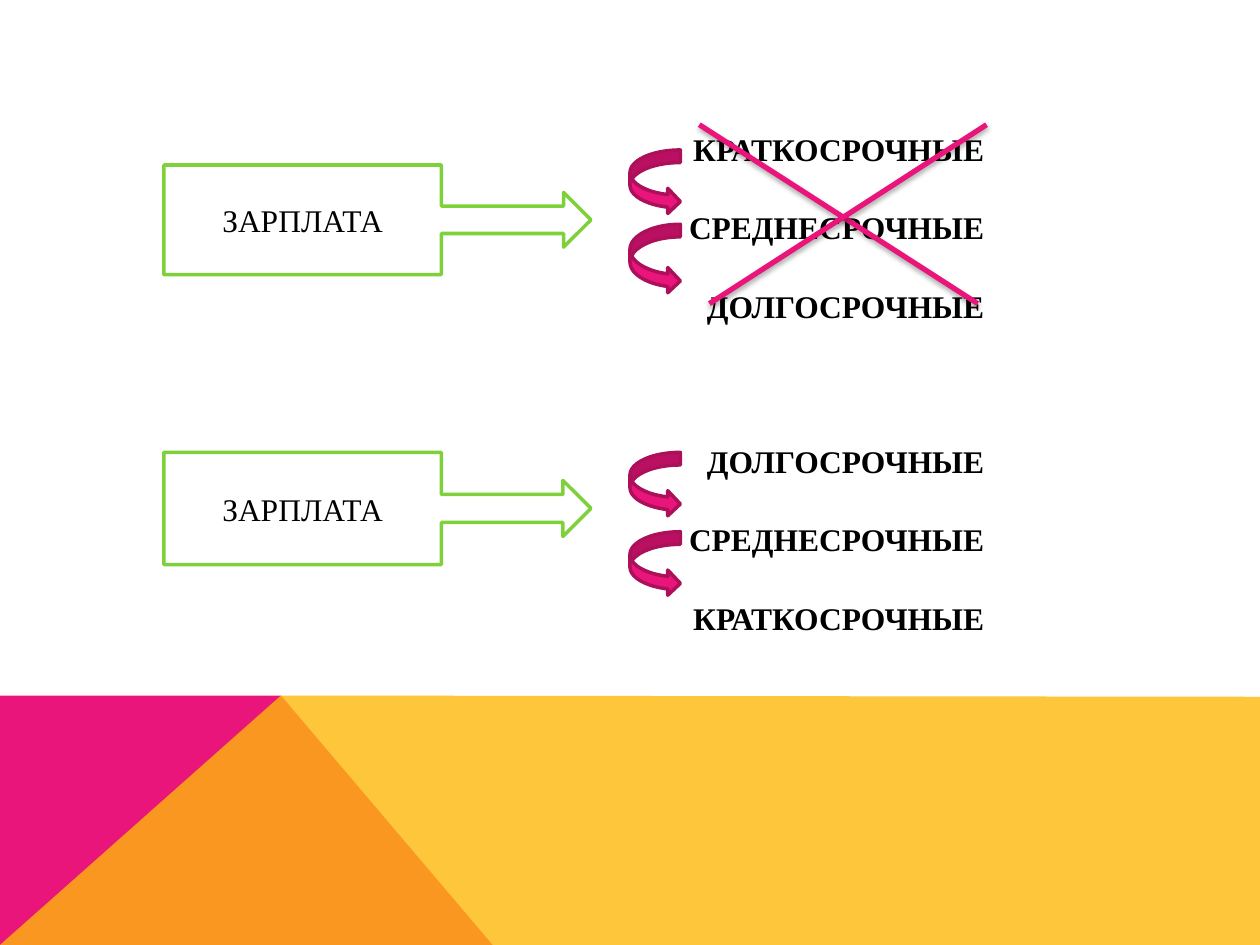
from lxml import etree
from pptx import Presentation
from pptx.dml.color import RGBColor
from pptx.enum.shapes import MSO_CONNECTOR, MSO_SHAPE
from pptx.enum.text import MSO_ANCHOR, PP_ALIGN
from pptx.oxml import parse_xml
from pptx.oxml.ns import nsdecls, qn
from pptx.util import Inches, Pt

STRAIGHT = MSO_CONNECTOR.STRAIGHT
CALLOUT = MSO_SHAPE.RIGHT_ARROW_CALLOUT
CURVED_ARROW = MSO_SHAPE.CURVED_RIGHT_ARROW
MIDDLE = MSO_ANCHOR.MIDDLE
CENTER, RIGHT = PP_ALIGN.CENTER, PP_ALIGN.RIGHT

PINK = RGBColor(0xEA, 0x15, 0x7A)
DARK_PINK = RGBColor(0xAD, 0x10, 0x5A)
YELLOW = RGBColor(0xFE, 0xB8, 0x0A)
GREEN = RGBColor(0x7F, 0xD1, 0x3B)
WHITE = RGBColor(0xFF, 0xFF, 0xFF)
BLACK = RGBColor(0, 0, 0)
FONT = "Times New Roman"

SHADOW = (
    f'<a:effectLst {nsdecls("a")}>'
    f'<a:outerShdw blurRad="{Pt(3.1)}" dist="{Pt(1.8)}" dir="5400000" rotWithShape="0">'
    '<a:srgbClr val="000000"><a:alpha val="35000"/></a:srgbClr>'
    '</a:outerShdw></a:effectLst>'
)


def add_outlined(kind, left, top, width, height, fill, line):
    sp = s.shapes.add_shape(kind, Inches(left), Inches(top), Inches(width), Inches(height))
    sp.shadow.inherit = False
    sp.fill.solid()
    sp.fill.fore_color.rgb = fill
    sp.line.color.rgb = line
    sp.line.width = Pt(2)
    return sp


def add_run(p, text, bold=False):
    r = p.add_run()
    r.text = text
    r.font.name = FONT
    r.font.size = Pt(18)
    r.font.bold = bold
    r.font.color.rgb = BLACK


prs = Presentation()
prs.slide_width, prs.slide_height = Inches(10), Inches(7.5)
s = prs.slides.add_slide(prs.slide_layouts[6])

# Coloured band along the bottom
bands = [
    (PINK, [(0, 7.5), (0, 5.52), (2.23, 5.52), (3.91, 7.5)]),
    (YELLOW, [(0, 7.5), (2.23, 5.52), (10, 5.53), (10, 7.5)]),
]
for color, points in bands:
    (x, y), *rest = [(Inches(px), Inches(py)) for px, py in points]
    builder = s.shapes.build_freeform(x, y)
    builder.add_line_segments(rest, close=True)
    sp = builder.convert_to_shape()
    sp.shadow.inherit = False
    sp.fill.solid()
    sp.fill.fore_color.rgb = color
    sp.line.fill.background()
# The yellow part lets the pink show through
clr = sp.fill._xPr.find(qn("a:solidFill"))[0]
etree.SubElement(clr, qn("a:alpha")).set("val", "80000")

# Both lists of terms, the second set off by one line
terms = ["КРАТКОСРОЧНЫЕ", "СРЕДНЕСРОЧНЫЕ", "ДОЛГОСРОЧНЫЕ"]
tf = s.shapes.add_textbox(Inches(0.9), Inches(0.68), Inches(7.01), Inches(4.44)).text_frame
tf.word_wrap = True
for i, term in enumerate(terms + terms[::-1]):
    p = tf.paragraphs[0] if i == 0 else tf.add_paragraph()
    p.alignment = RIGHT
    p.line_spacing = 2.0
    p.space_before = Pt(45 if i == len(terms) else 1.8)
    add_run(p, term, bold=True)

# Curved arrows from term to term
for top, height in [(1.19, 0.51), (1.78, 0.55), (3.59, 0.51), (4.22, 0.51)]:
    add_outlined(CURVED_ARROW, 5, top, 0.4, height, PINK, DARK_PINK)

# Cross over the first list
for x1, y1, x2, y2 in [(5.55, 0.99, 7.76, 2.41), (5.63, 2.41, 7.83, 0.99)]:
    line = s.shapes.add_connector(STRAIGHT, Inches(x1), Inches(y1), Inches(x2), Inches(y2))
    line.line.color.rgb = PINK
    line.line.width = Pt(3)
    line._element.spPr.append(parse_xml(SHADOW))

# Salary callouts
for top, height in [(1.31, 0.87), (3.59, 0.89)]:
    sp = add_outlined(CALLOUT, 1.3, top, 3.39, height, WHITE, GREEN)
    tf = sp.text_frame
    tf.vertical_anchor = MIDDLE
    p = tf.paragraphs[0]
    p.alignment = CENTER
    add_run(p, "ЗАРПЛАТА")

prs.save("out.pptx")
